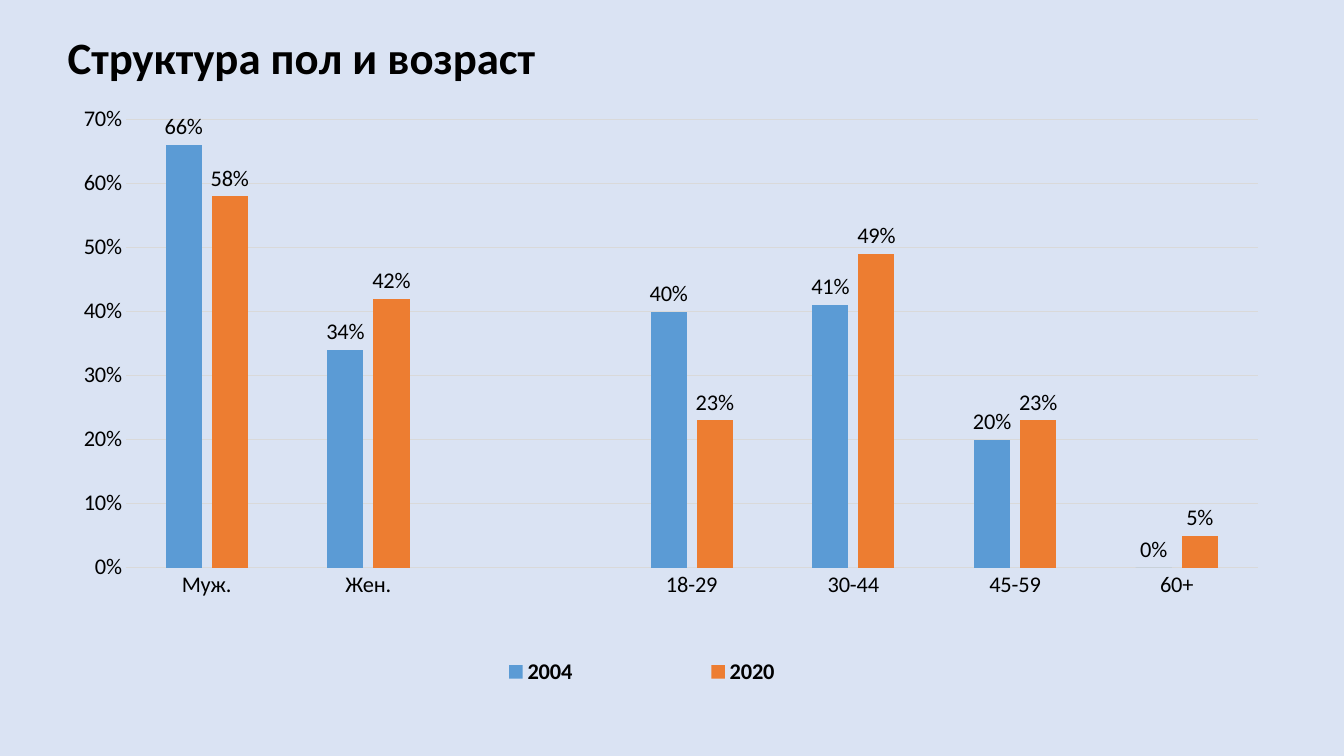
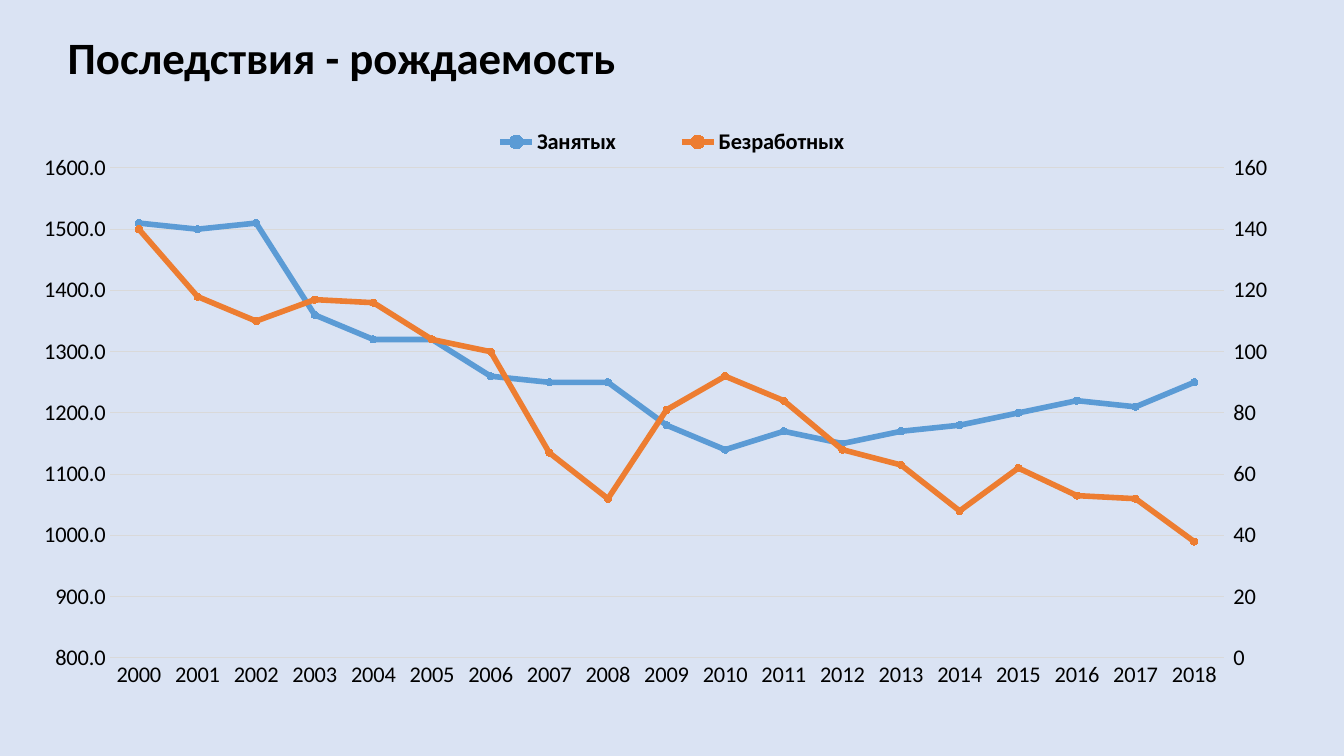
from copy import deepcopy
from dataclasses import dataclass

from pptx import Presentation
from pptx import util as u
from pptx.chart import axis as ax
from pptx.chart.chart import Chart
from pptx.chart.data import CategoryChartData
from pptx.dml.color import RGBColor
from pptx.enum import chart as ch
from pptx.enum import text as tx
from pptx.oxml import parse_xml
from pptx.oxml.ns import nsdecls, qn
from pptx.slide import Slide
from pptx.text.text import Font, TextFrame

BACKGROUND = RGBColor(0xDA, 0xE3, 0xF3)
BLACK = RGBColor(0, 0, 0)
GRID = RGBColor(0xD9, 0xD9, 0xD9)
SERIES_COLORS = (RGBColor(0x5B, 0x9B, 0xD5), RGBColor(0xED, 0x7D, 0x31))
FONT = "Calibri"
TITLE_LEFT, TITLE_TOP, TITLE_WIDTH, TITLE_HEIGHT = 41.2, 15, 828, 55.4


@dataclass(frozen=True)
class Box:
    """A rectangle, in points on a slide or in fractions inside a chart."""
    left: float
    top: float
    width: float
    height: float


@dataclass(frozen=True)
class ChartSpec:
    kind: ch.XL_CHART_TYPE
    place: Box
    plot_area: Box
    legend_area: Box
    legend_side: ch.XL_LEGEND_POSITION
    number_format: str
    minimum: float
    maximum: float
    step: float
    categories: tuple[str, ...]
    series: dict[str, tuple[float | None, ...]]


SEX_AND_AGE = ChartSpec(
    kind=ch.XL_CHART_TYPE.COLUMN_CLUSTERED,
    place=Box(41.3, 70.9, 868.3, 428.4),
    plot_area=Box(0.056, 0.034, 0.931, 0.747),
    legend_area=Box(0.263, 0.915, 0.435, 0.08),
    legend_side=ch.XL_LEGEND_POSITION.BOTTOM,
    number_format="0%", minimum=0, maximum=0.7, step=0.1,
    categories=("Муж.", "Жен.", "", "18-29", "30-44", "45-59", "60+"),
    series={
        "2004": (0.66, 0.34, None, 0.4, 0.41, 0.2, 0),
        "2020": (0.58, 0.42, None, 0.23, 0.49, 0.23, 0.05),
    },
)
EMPLOYMENT = ChartSpec(
    kind=ch.XL_CHART_TYPE.LINE_MARKERS,
    place=Box(13.7, 70.9, 909.4, 430.6),
    plot_area=Box(0.071, 0.114, 0.875, 0.813),
    legend_area=Box(0.332, 0.031, 0.362, 0.08),
    legend_side=ch.XL_LEGEND_POSITION.TOP,
    number_format="0.0", minimum=800, maximum=1600, step=100,
    categories=tuple(str(year) for year in range(2000, 2019)),
    series={
        "Занятых": (1510, 1500, 1510, 1360, 1320, 1320, 1260, 1250, 1250, 1180,
                    1140, 1170, 1150, 1170, 1180, 1200, 1220, 1210, 1250),
        "Безработных": (140, 118, 110, 117, 116, 104, 100, 67, 52, 81,
                        92, 84, 68, 63, 48, 62, 53, 52, 38),
    },
)


def style_font(font: Font, size: float = 16, bold: bool = False) -> None:
    font.name = FONT
    font.size = u.Pt(size)
    font.bold = bold
    font.color.rgb = BLACK


def write(frame: TextFrame, content: str, *, size: float, bold: bool = False,
          align: tx.PP_ALIGN = tx.PP_ALIGN.LEFT, spacing: float = 1.0) -> None:
    paragraph = frame.paragraphs[0]
    paragraph.alignment = align
    paragraph.line_spacing = spacing
    run = paragraph.add_run()
    run.text = content
    style_font(run.font, size, bold)


def add_titled_slide(deck, heading: str) -> Slide:
    slide = deck.slides.add_slide(deck.slide_layouts.get_by_name("Title Only"))
    title = slide.shapes.title
    title.left, title.top = u.Pt(TITLE_LEFT), u.Pt(TITLE_TOP)
    title.width, title.height = u.Pt(TITLE_WIDTH), u.Pt(TITLE_HEIGHT)
    frame = title.text_frame
    frame.word_wrap = True
    frame.auto_size = tx.MSO_AUTO_SIZE.NONE
    frame.vertical_anchor = tx.MSO_ANCHOR.MIDDLE
    write(frame, heading, size=32, bold=True, spacing=0.9)
    return slide


def set_layout(parent, index: int, area: Box, inner: bool = False) -> None:
    """Fix the place of a chart part, as fractions of the chart."""
    for old in parent.findall(qn("c:layout")):
        parent.remove(old)
    target = '<c:layoutTarget val="inner"/>' if inner else ""
    parent.insert(index, parse_xml(
        f'<c:layout {nsdecls("c")}><c:manualLayout>{target}'
        '<c:xMode val="edge"/><c:yMode val="edge"/>'
        f'<c:x val="{area.left}"/><c:y val="{area.top}"/>'
        f'<c:w val="{area.width}"/><c:h val="{area.height}"/>'
        '</c:manualLayout></c:layout>'))


def set_scale(axis: ax.ValueAxis, low: float, high: float, step: float,
              number_format: str) -> None:
    axis.minimum_scale, axis.maximum_scale, axis.major_unit = low, high, step
    axis.tick_labels.number_format = number_format
    axis.tick_labels.number_format_is_linked = False


def style_axes(chart: Chart, spec: ChartSpec) -> None:
    for axis in (chart.category_axis, chart.value_axis):
        axis.major_tick_mark = axis.minor_tick_mark = ch.XL_TICK_MARK.NONE
        style_font(axis.tick_labels.font)
    values = chart.value_axis
    set_scale(values, spec.minimum, spec.maximum, spec.step, spec.number_format)
    values.format.line.fill.background()
    values.has_major_gridlines = True
    for line in (chart.category_axis.format.line, values.major_gridlines.format.line):
        line.color.rgb = GRID
        line.width = u.Pt(0.75)


def add_styled_chart(slide: Slide, spec: ChartSpec) -> Chart:
    data = CategoryChartData()
    data.categories = spec.categories
    for name, values in spec.series.items():
        data.add_series(name, values)
    place = spec.place
    chart = slide.shapes.add_chart(
        spec.kind, u.Pt(place.left), u.Pt(place.top),
        u.Pt(place.width), u.Pt(place.height), data).chart
    chart.has_title = False
    style_font(chart.font)
    chart.plots[0].vary_by_categories = False
    style_axes(chart, spec)
    chart.has_legend = True
    chart.legend.position = spec.legend_side
    chart.legend.include_in_layout = False
    style_font(chart.legend.font, bold=True)
    body = chart.element.find(qn("c:chart"))
    set_layout(body.find(qn("c:plotArea")), 0, spec.plot_area, inner=True)
    set_layout(body.find(qn("c:legend")), 1, spec.legend_area)
    return chart


def style_columns(chart: Chart, number_format: str) -> None:
    plot = chart.plots[0]
    plot.gap_width, plot.overlap = 219, -27
    for series, color in zip(plot.series, SERIES_COLORS):
        series.format.fill.solid()
        series.format.fill.fore_color.rgb = color
        labels = series.data_labels
        labels.show_value = True
        labels.number_format = number_format
        labels.number_format_is_linked = False
        labels.position = ch.XL_LABEL_POSITION.OUTSIDE_END
        style_font(labels.font)


def style_lines(chart: Chart) -> None:
    for series, color in zip(chart.plots[0].series, SERIES_COLORS):
        series.smooth = False
        series.format.line.color.rgb = color
        series.format.line.width = u.Pt(4)
        marker = series.marker
        marker.style, marker.size = ch.XL_MARKER_STYLE.CIRCLE, 5
        marker.format.fill.solid()
        marker.format.fill.fore_color.rgb = color
        marker.format.line.color.rgb = color


def move_last_series_to_right_axis(chart: Chart) -> ax.ValueAxis:
    area = chart.element.find(qn("c:chart")).find(qn("c:plotArea"))
    left_plot = area.find(qn("c:lineChart"))
    right_plot = deepcopy(left_plot)
    left_plot.remove(left_plot.findall(qn("c:ser"))[-1])
    for series in right_plot.findall(qn("c:ser"))[:-1]:
        right_plot.remove(series)
    left_plot.addnext(right_plot)

    left_values = area.find(qn("c:valAx"))
    categories = deepcopy(area.find(qn("c:catAx")))
    values = deepcopy(left_values)
    left_values.addnext(values)
    values.addnext(categories)
    category_id, value_id = "50010", "50020"
    for element, own, other in ((categories, category_id, value_id),
                                (values, value_id, category_id)):
        element.find(qn("c:axId")).set("val", own)
        element.find(qn("c:crossAx")).set("val", other)
    for reference, own in zip(right_plot.findall(qn("c:axId")), (category_id, value_id)):
        reference.set("val", own)
    values.find(qn("c:axPos")).set("val", "r")
    for crossing in values.findall(qn("c:crosses")):
        values.remove(crossing)
    values.find(qn("c:crossAx")).addnext(
        parse_xml(f'<c:crosses {nsdecls("c")} val="max"/>'))

    ax.CategoryAxis(categories).visible = False
    right_axis = ax.ValueAxis(values)
    right_axis.has_major_gridlines = False
    right_axis.major_tick_mark = ch.XL_TICK_MARK.OUTSIDE
    return right_axis


def main() -> None:
    deck = Presentation()
    deck.slide_width, deck.slide_height = u.Pt(960), u.Pt(540)
    backdrop = deck.slide_master.background.fill
    backdrop.solid()
    backdrop.fore_color.rgb = BACKGROUND

    structure = add_titled_slide(deck, "Структура пол и возраст")
    style_columns(add_styled_chart(structure, SEX_AND_AGE), SEX_AND_AGE.number_format)

    consequences = add_titled_slide(deck, "Последствия - рождаемость")
    employment = add_styled_chart(consequences, EMPLOYMENT)
    style_lines(employment)
    unemployed_axis = move_last_series_to_right_axis(employment)
    set_scale(unemployed_axis, 0, 160, 20, "General")

    deck.save("out.pptx")


if __name__ == "__main__":
    main()
